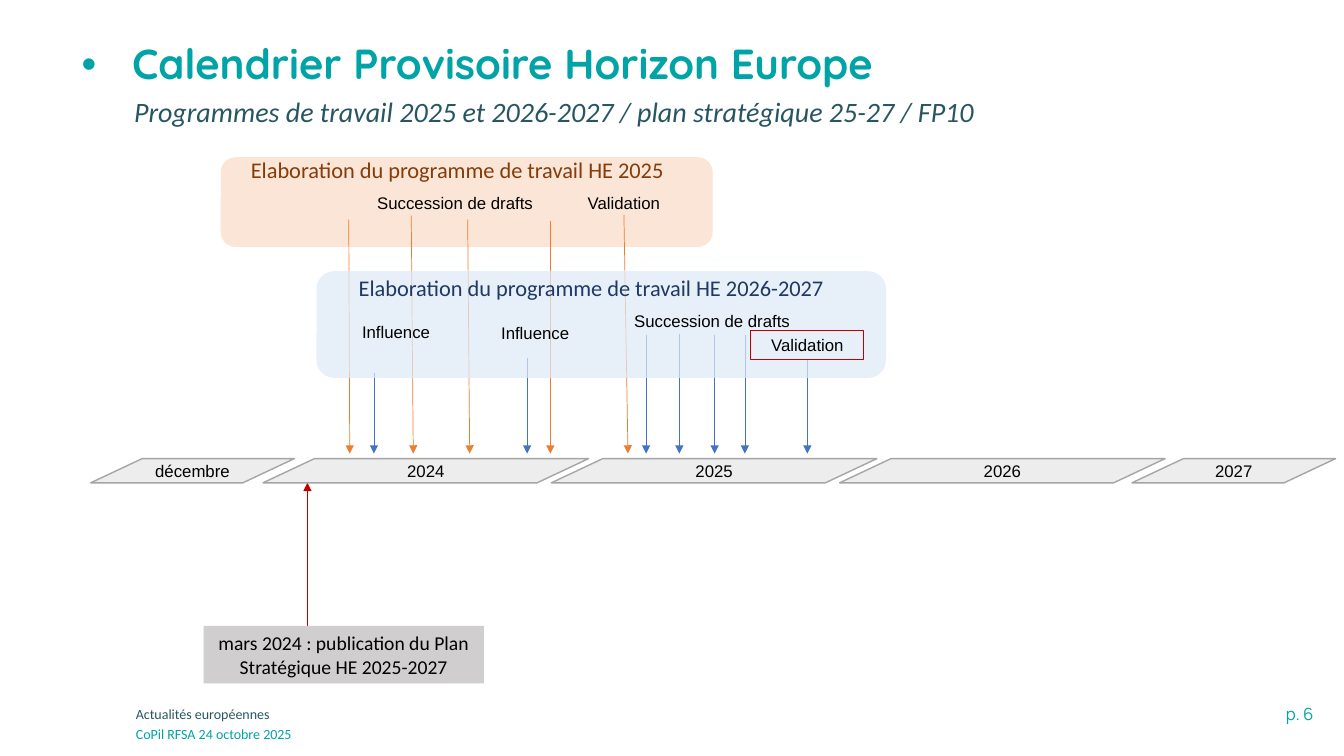
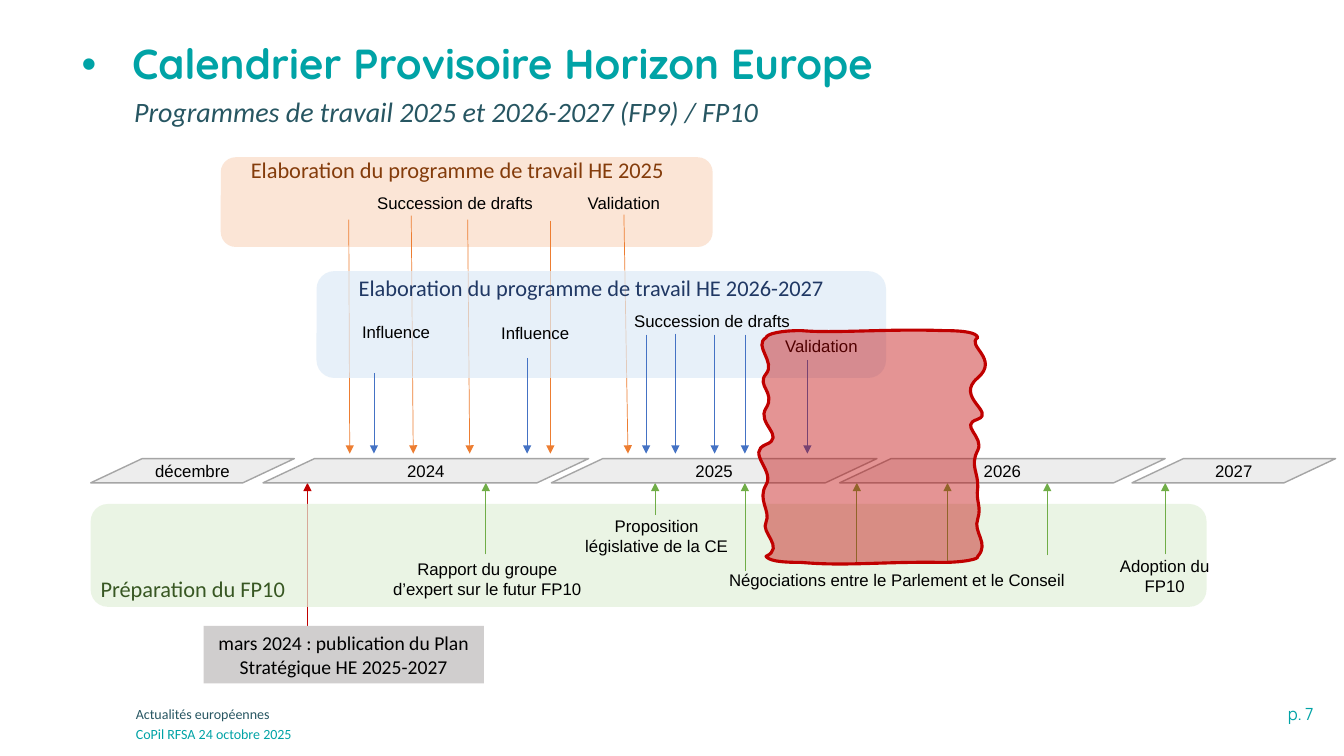
"""Build the two Horizon Europe calendar slides."""
from lxml import etree
from pptx import Presentation
from pptx import util as u
from pptx.dml import color
from pptx.enum import shapes, text
from pptx.oxml import ns

PX = 9144
COLOURS = {
    "teal": "00A3A6", "slate": "275662", "black": "000000", "grey": "D0CECE",
    "band": "EDEDED", "band_edge": "A5A5A5", "red": "C00000",
    "orange": "ED7D31", "orange_pale": "FBE5D6", "orange_dark": "843C0B",
    "blue": "4472C4", "blue_pale": "DEEBF7", "blue_dark": "203864",
    "green": "70AD47", "green_pale": "E2F0D9", "green_dark": "385723",
}
RGB = {name: color.RGBColor.from_string(code) for name, code in COLOURS.items()}
LEFT, CENTER, RIGHT = text.PP_ALIGN.LEFT, text.PP_ALIGN.CENTER, text.PP_ALIGN.RIGHT
KIND = shapes.MSO_SHAPE


def decorate(shape, words="", size=12, font="Arial", colour="black", align=CENTER,
             wrap=True, fill=None, alpha=100, line=None, width=1, bold=None, italic=None):
    """Set the fill, outline and text of a shape."""
    if not shape.is_placeholder:
        shape.shadow.inherit = False
    if fill:
        shape.fill.solid()
        shape.fill.fore_color.rgb = RGB[fill]
        if alpha < 100:
            tint = shape.fill._xPr.find(".//" + ns.qn("a:srgbClr"))
            etree.SubElement(tint, ns.qn("a:alpha"), val=str(alpha * 1000))
    else:
        shape.fill.background()
    if line:
        shape.line.color.rgb = RGB[line]
        shape.line.width = u.Pt(width)
    else:
        shape.line.fill.background()
    if words:
        frame = shape.text_frame
        frame.text = words
        frame.word_wrap = wrap
        para = frame.paragraphs[0]
        para.alignment = align
        for span in para.runs:
            span.font.name = font
            span.font.size = u.Pt(size)
            span.font.bold = bold
            span.font.italic = italic
            span.font.color.rgb = RGB[colour]


def add_box(page, kind, place, **look):
    """Add a preset shape, or a text box when kind is None, at a place in px."""
    place = [n * PX for n in place]
    box = page.shapes.add_shape(kind, *place) if kind else page.shapes.add_textbox(*place)
    decorate(box, **look)
    return box


ORANGE_PANEL = ((219, 156, 488, 89), "orange", 100,
                "Elaboration du programme de travail HE 2025", (239, 150, 435, 37))
BLUE_PANEL = ((314, 269, 565, 106), "blue", 70,
              "Elaboration du programme de travail HE 2026-2027", (346, 267, 488, 37))
GREEN_PANEL = ((90, 500, 1107, 102), "green", 70,
               "Préparation du FP10", (90, 566, 206, 37))

PLAN_ARROW = [("red", 305, 621, 305, 479)]
ORANGE_ARROWS = [("orange", x, y, end, 450) for x, y, end in
                 [(464, 218, 466), (408, 214, 410), (346, 218, 347),
                  (546, 219, 546), (619, 213, 623)]]
BLUE_ARROWS, BLUE_ARROWS_FP10 = [
    [("blue", x, y, x, 450) for x, y in
     [(371, 370), (523, 355), (641, 332), (second_draft, 331),
      (709, 332), (739, 332), (801, 357)]]
    for second_draft in (674, 670)]
GREEN_ARROWS = [("green", x, y, x, 479) for x, y in
                [(482, 550), (650, 511), (739, 566), (850, 558),
                 (940, 558), (1039, 551), (1156, 550)]]

LABELS = [
    ("Succession de drafts", (347, 186, 209, 40)),
    ("Validation", (552, 186, 134, 42)),
    ("Influence", (326, 314, 134, 59)),
    ("Influence", (464, 315, 134, 59)),
    ("Succession de drafts", (602, 303, 209, 40)),
]
FP10_LABELS = [
    ("Validation", (748, 328, 134, 42)),
    ("Rapport du groupe d’expert sur le futur FP10", (376, 549, 215, 50)),
    ("Proposition législative de la CE", (563, 507, 177, 50)),
    ("Négociations entre le Parlement et le Conseil", (708, 560, 364, 28)),
    ("Adoption du FP10", (1080, 546, 151, 50)),
]
PERIODS = [("décembre", 90, 202), ("2024", 261, 323), ("2025", 547, 323),
           ("2026", 833, 323), ("2027", 1123, 202)]
FOOTERS = [("Actualités européennes", 695, "slate"),
           ("CoPil RFSA 24 octobre 2025", 715, "teal")]

BLOB_LEFT, BLOB_TOP = 760, 328
BLOB_START = (760, 552)
BLOB_CURVES = [
    (763, 556, 772, 558, 795, 558), (840, 562, 876, 557, 935, 558),
    (954, 558, 972, 555, 970, 552), (982, 539, 965, 528, 970, 515),
    (974, 502, 968, 498, 970, 484), (971, 469, 962, 462, 970, 447),
    (977, 433, 951, 422, 970, 416), (988, 409, 947, 394, 970, 375),
    (992, 356, 958, 343, 970, 335), (969, 330, 957, 328, 935, 328),
    (881, 326, 826, 331, 795, 328), (775, 328, 761, 331, 760, 335),
    (747, 343, 770, 359, 760, 371), (750, 383, 770, 389, 760, 405),
    (750, 420, 780, 433, 760, 441), (740, 449, 769, 467, 760, 481),
    (751, 496, 765, 507, 760, 518), (754, 528, 779, 543, 760, 552),
]

PAGES = [
    (6, "Programmes de travail 2025 et 2026-2027 / plan stratégique 25-27 / FP10", LABELS,
     [([ORANGE_PANEL], PLAN_ARROW + ORANGE_ARROWS + BLUE_ARROWS), ([BLUE_PANEL], [])]),
    (7, "Programmes de travail 2025 et 2026-2027 (FP9) / FP10", LABELS + FP10_LABELS,
     [([ORANGE_PANEL], PLAN_ARROW + ORANGE_ARROWS),
      ([BLUE_PANEL, GREEN_PANEL], BLUE_ARROWS_FP10 + GREEN_ARROWS)]),
]

deck = Presentation()
deck.slide_width, deck.slide_height = u.Emu(12192000), u.Emu(6858000)

for number, subtitle_words, labels, layers in PAGES:
    page = deck.slides.add_slide(deck.slide_layouts[0])

    title, subtitle = page.shapes.title, page.placeholders[1]
    for holder, place in ((title, (81, 17, 1117, 97)), (subtitle, (123, 93, 1059, 74))):
        holder.left, holder.top, holder.width, holder.height = [n * PX for n in place]
    decorate(title, "Calendrier Provisoire Horizon Europe", 30, "Quicksand", "teal", LEFT,
             bold=True)
    decorate(subtitle, subtitle_words, 20, "Calibri", "slate", LEFT, italic=True)
    title.text_frame.margin_left = 0
    title.text_frame.vertical_anchor = text.MSO_ANCHOR.MIDDLE
    subtitle.text_frame.vertical_anchor = text.MSO_ANCHOR.TOP
    for holder in (title, subtitle):
        holder.text_frame.auto_size = text.MSO_AUTO_SIZE.NONE
        para = holder.text_frame.paragraphs[0]
        para.line_spacing = 0.9
        para.space_before = u.Pt(0)
    props = title.text_frame.paragraphs[0]._p.get_or_add_pPr()
    props.set("marL", str(50 * PX))
    props.set("indent", str(-50 * PX))
    etree.SubElement(props, ns.qn("a:buFont"), typeface="Arial")
    etree.SubElement(props, ns.qn("a:buChar"), char="•")

    connectors = []
    for panels, arrows in layers:
        for place, hue, alpha, heading, heading_place in panels:
            add_box(page, KIND.ROUNDED_RECTANGLE, place, fill=hue + "_pale", alpha=alpha)
            add_box(page, None, heading_place, words=heading, size=16, font="Calibri",
                    colour=hue + "_dark", align=LEFT, wrap=False)
        for hue, *ends in arrows:
            arrow = page.shapes.add_connector(shapes.MSO_CONNECTOR.STRAIGHT,
                                              *[n * PX for n in ends])
            arrow.line.color.rgb = RGB[hue]
            arrow.line.width = u.Pt(0.5)
            etree.SubElement(arrow.line._get_or_add_ln(), ns.qn("a:tailEnd"), type="triangle")
            etree.SubElement(arrow._element.spPr, ns.qn("a:effectLst"))
            connectors.append(arrow)

    add_box(page, KIND.RECTANGLE, (202, 621, 278, 57), size=14, font="Calibri", fill="grey",
            words="mars 2024 : publication du Plan Stratégique HE 2025-2027")

    for period, left, width in PERIODS:
        band = add_box(page, KIND.PARALLELOGRAM, (left, 455, width, 24), words=period,
                       wrap=False, fill="band", line="band_edge")
        band.adjustments[0] = 51 / 24
        band.text_frame.margin_top = band.text_frame.margin_bottom = 0

    for words, place in labels:
        add_box(page, None, place, words=words)

    if number == 6:
        validation = add_box(page, KIND.RECTANGLE, (745, 328, 112, 29), words="Validation",
                             line="red", width=0)
        connectors[-1].begin_connect(validation, 2)
    else:
        builder = page.shapes.build_freeform(*BLOB_START, scale=PX)
        builder.add_line_segments([curve[4:] for curve in BLOB_CURVES], close=True)
        blob = builder.convert_to_shape()
        segments = list(blob._element.iter(ns.qn("a:lnTo")))
        for segment, (x1, y1, x2, y2, *_) in zip(segments, BLOB_CURVES):
            segment.tag = ns.qn("a:cubicBezTo")
            for place, (x, y) in enumerate(((x1, y1), (x2, y2))):
                point = etree.Element(ns.qn("a:pt"), x=str(x - BLOB_LEFT), y=str(y - BLOB_TOP))
                segment.insert(place, point)
        decorate(blob, fill="red", alpha=42, line="red", width=2.25)

    for words, top, colour in FOOTERS:
        add_box(page, None, (125, top, 734, 27), words=words, size=10, font="Calibri",
                colour=colour, align=LEFT)
    add_box(page, None, (1085, 693, 228, 30), words=f"p. {number}", font="Manrope",
            colour="teal", align=RIGHT)

deck.save("out.pptx")
